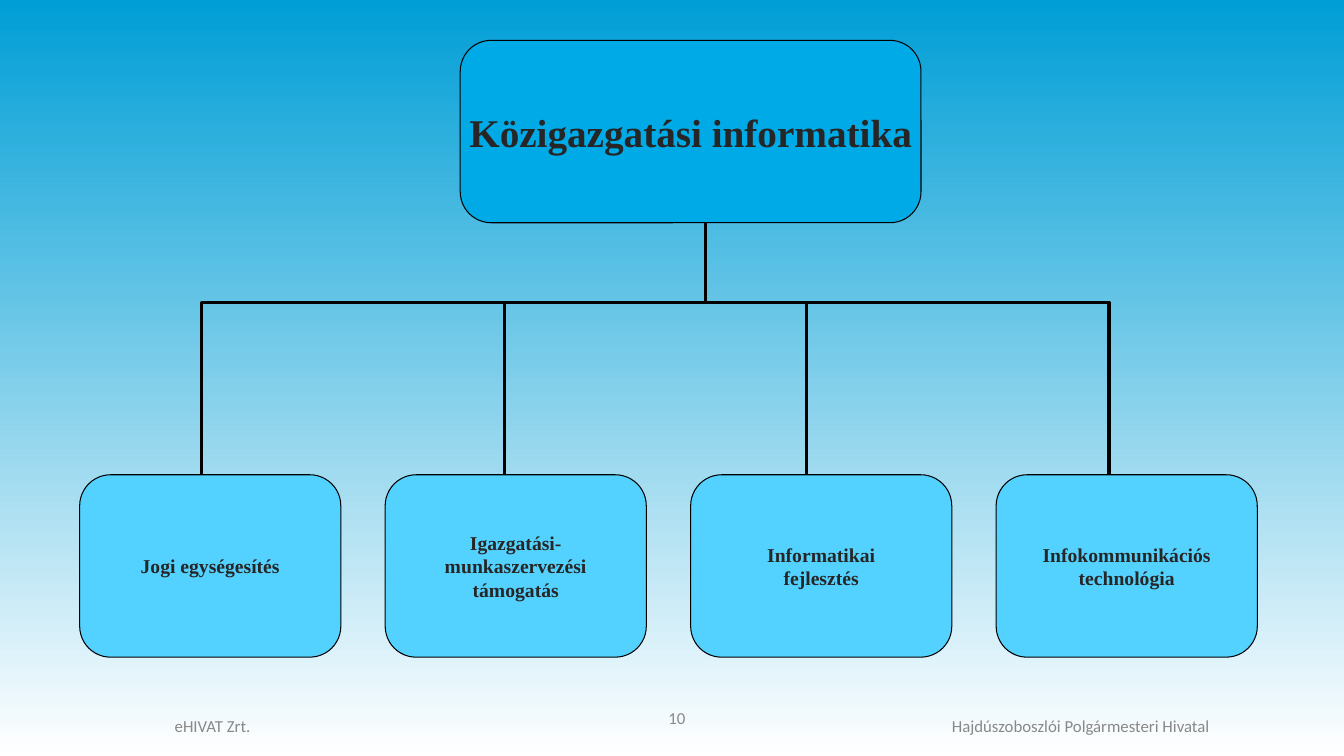
import dataclasses

import pptx
import pptx.dml.color
import pptx.enum.shapes
import pptx.enum.text
import pptx.util

SHAPE = pptx.enum.shapes.MSO_SHAPE
ALIGN = pptx.enum.text.PP_ALIGN
MIDDLE = pptx.enum.text.MSO_ANCHOR.MIDDLE


@dataclasses.dataclass(frozen=True)
class Theme:
    sky: str = "009ED6"
    ground: str = "FFFFFF"
    root: str = "00AAE6"
    branch: str = "53D2FF"
    ink: str = "262626"
    line: str = "000000"
    muted: str = "888888"
    serif: str = "Times New Roman"
    sans: str = "Calibri"
    title_size: float = 28
    label_size: float = 14
    footer_size: float = 12
    outline: float = 0.75
    link: float = 2.25


@dataclasses.dataclass(frozen=True)
class Grid:
    """Columns and rows in inches: first edge, pitch and cell size."""
    left: float = 0.79
    column: float = 3.03
    width: float = 2.59
    top: float = 0.4
    row: float = 4.31
    height: float = 1.81

    def x(self, column):
        return self.left + column * self.column

    def y(self, row):
        return self.top + row * self.row

    def middle(self, column):
        return self.x(column) + self.width / 2


def color(value):
    return pptx.dml.color.RGBColor.from_string(value)


class ChartPage:
    def __init__(self, deck, theme, grid):
        self.theme, self.grid = theme, grid
        self.width, self.height = deck.slide_width, deck.slide_height
        self.page = deck.slides.add_slide(deck.slide_layouts[5])  # title only

    def background(self):
        fill = self.page.background.fill
        fill.gradient()
        fill.gradient_angle = 270
        for stop, value in zip(fill.gradient_stops, (self.theme.sky, self.theme.ground)):
            stop.color.rgb = color(value)

    def label(self, box, text, size, ink, font, bold=False, align=ALIGN.CENTER):
        frame = box.text_frame
        frame.text = text
        frame.word_wrap = False
        frame.vertical_anchor = MIDDLE
        frame.margin_left = frame.margin_right = frame.margin_top = frame.margin_bottom = 0
        for para in frame.paragraphs:
            para.alignment = align
            for span in para.runs:
                span.font.size = pptx.util.Pt(size)
                span.font.name = font
                span.font.bold = bold
                span.font.color.rgb = color(ink)

    def box(self, left, row, width, fill):
        grid = self.grid
        box = self.page.shapes.add_shape(
            SHAPE.ROUNDED_RECTANGLE,
            *map(pptx.util.Inches, (left, grid.y(row), width, grid.height)))
        box.adjustments[0] = 0.17
        box.shadow.inherit = False
        box.fill.solid()
        box.fill.fore_color.rgb = color(fill)
        box.line.color.rgb = color(self.theme.line)
        box.line.width = pptx.util.Pt(self.theme.outline)
        return box

    def branch(self, column, text):
        theme = self.theme
        box = self.box(self.grid.x(column), 1, self.grid.width, theme.branch)
        self.label(box, text, theme.label_size, theme.ink, theme.serif, bold=True)

    def root(self, center, width, text):
        theme = self.theme
        box = self.box(center - width / 2, 0, width, theme.root)
        title = self.page.shapes.title
        title.left, title.top = box.left, box.top
        title.width, title.height = box.width, box.height
        self.label(title, text, theme.title_size, theme.ink, theme.serif, bold=True)
        self.page.shapes.element.append(title.element)  # in front of its box

    def link(self, center, column):
        grid = self.grid
        start, end = grid.y(0) + grid.height, grid.y(1)
        bend, target = (start + end) / 2, grid.middle(column)
        builder = self.page.shapes.build_freeform(center, start, scale=pptx.util.Inches(1))
        builder.add_line_segments(
            [(center, bend), (target, bend), (target, end)], close=False)
        elbow = builder.convert_to_shape()
        elbow.shadow.inherit = False
        elbow.fill.background()
        elbow.line.color.rgb = color(self.theme.line)
        elbow.line.width = pptx.util.Pt(self.theme.link)

    def footer(self, left, middle, width, text, align):
        """Left, middle and width are shares of the slide's size."""
        theme, height = self.theme, 0.04
        box = self.page.shapes.add_textbox(
            int(left * self.width), int((middle - height / 2) * self.height),
            int(width * self.width), int(height * self.height))
        self.label(box, text, theme.footer_size, theme.muted, theme.sans, align=align)
        box.text_frame.word_wrap = True


deck = pptx.Presentation()
deck.slide_width = pptx.util.Inches(13.33)
deck.slide_height = pptx.util.Inches(7.5)

grid = Grid()
chart = ChartPage(deck, Theme(), grid)
chart.background()

# Organisation tree: links first, boxes over them
branches = (
    "Jogi egységesítés",
    "Igazgatási-\nmunkaszervezési\ntámogatás",
    "Informatikai\nfejlesztés",
    "Infokommunikációs\ntechnológia",
)
trunk = grid.x(2)
for column in range(len(branches)):
    chart.link(trunk, column)
chart.root(trunk, 4.57, "Közigazgatási informatika")
for column, text in enumerate(branches):
    chart.branch(column, text)

# Footer and page number
chart.footer(0.13, 0.96, 0.1, "eHIVAT Zrt.", ALIGN.LEFT)
chart.footer(0.65, 0.96, 0.25, "Hajdúszoboszlói Polgármesteri Hivatal", ALIGN.RIGHT)
chart.footer(0.48, 0.95, 0.03, "10", ALIGN.RIGHT)

deck.save("out.pptx")
